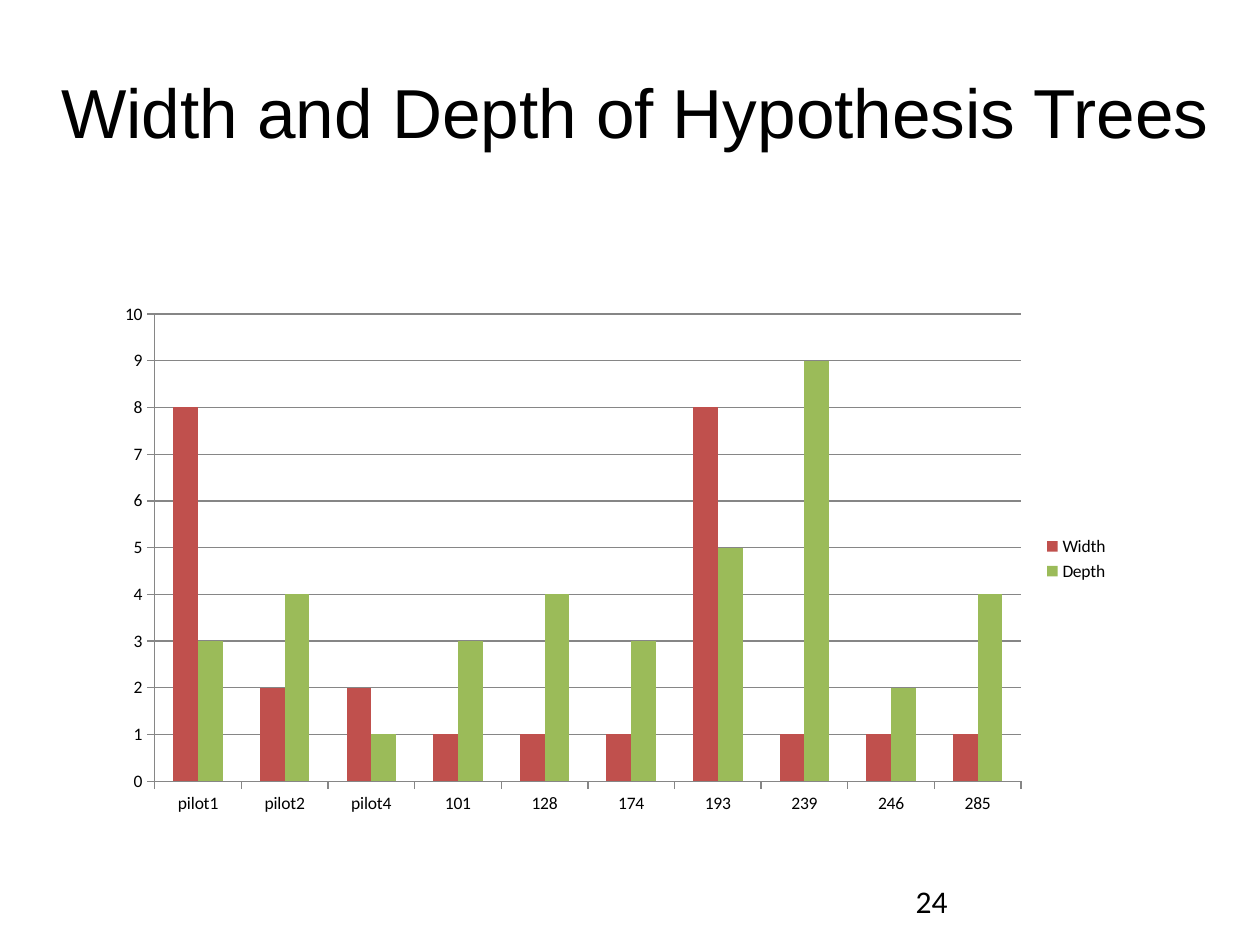
from pptx import Presentation
from pptx import util as u
from pptx.chart.data import CategoryChartData
from pptx.dml.color import RGBColor
from pptx.enum import chart as charts, text

COLORS = {"ink": "000000", "axis": "868686", "Width": "C0504D", "Depth": "9BBB59"}
TREES = ["pilot1", "pilot2", "pilot4", "101", "128", "174", "193", "239", "246", "285"]
SIZES = {
    "Width": [8, 2, 2, 1, 1, 1, 8, 1, 1, 1],
    "Depth": [3, 4, 1, 3, 4, 3, 5, 9, 2, 4],
}


def color(name):
    return RGBColor.from_string(COLORS[name])


def apply(target, values):
    for name, value in values.items():
        setattr(target, name, value)


class SlideBuilder:
    """Holds the text style and the current slide."""

    def __init__(self, slide, body_font="Calibri"):
        self.slide = slide
        self.body_font = body_font

    def style_font(self, font, size, name=None):
        apply(font, {"name": name or self.body_font, "size": u.Pt(size)})
        font.color.rgb = color("ink")

    def style_line(self, line):
        line.color.rgb = color("axis")
        line.width = u.Pt(0.75)

    def add_text(self, words, place, size, name=None,
                 align=text.PP_ALIGN.LEFT, anchor=text.MSO_ANCHOR.TOP):
        box = self.slide.shapes.add_textbox(*map(u.Cm, place))
        apply(box.text_frame, {"word_wrap": True, "vertical_anchor": anchor})
        para = box.text_frame.paragraphs[0]
        para.alignment = align
        span = para.add_run()
        span.text = words
        self.style_font(span.font, size, name)

    def add_columns(self, categories, series, place):
        data = CategoryChartData()
        data.categories = categories
        for name, values in series.items():
            data.add_series(name, values)
        chart = self.slide.shapes.add_chart(
            charts.XL_CHART_TYPE.COLUMN_CLUSTERED, *map(u.Cm, place), data).chart
        apply(chart, {"has_title": False, "has_legend": True})
        self.style_font(chart.font, 10)
        apply(chart.legend, {"position": charts.XL_LEGEND_POSITION.RIGHT,
                             "include_in_layout": False})

        # Columns
        plot = chart.plots[0]
        apply(plot, {"gap_width": 150, "overlap": 0, "vary_by_categories": False})
        for columns in plot.series:
            columns.invert_if_negative = False
            columns.format.fill.solid()
            columns.format.fill.fore_color.rgb = color(columns.name)

        # Axes and gridlines
        for axis in (chart.category_axis, chart.value_axis):
            apply(axis, {"major_tick_mark": charts.XL_TICK_MARK.OUTSIDE,
                         "minor_tick_mark": charts.XL_TICK_MARK.NONE})
            self.style_line(axis.format.line)
        apply(chart.value_axis, {"minimum_scale": 0, "maximum_scale": 10,
                                 "major_unit": 1, "has_major_gridlines": True})
        self.style_line(chart.value_axis.major_gridlines.format.line)


def main():
    deck = Presentation()
    apply(deck, {"slide_width": u.Cm(25.4), "slide_height": u.Cm(19.05)})
    page = SlideBuilder(deck.slides.add_slide(deck.slide_layouts[6]))

    # Title
    page.add_text("Width and Depth of Hypothesis Trees", (0.64, 0.64, 24.33, 3.18),
                  39.6, "Arial", text.PP_ALIGN.CENTER, text.MSO_ANCHOR.MIDDLE)
    # Tree sizes
    page.add_columns(TREES, SIZES, (2.11, 5.92, 20.5, 10.69))
    # Page number
    page.add_text("24", (18.21, 17.65, 5.93, 1.02), 18)

    deck.save("out.pptx")


if __name__ == "__main__":
    main()
